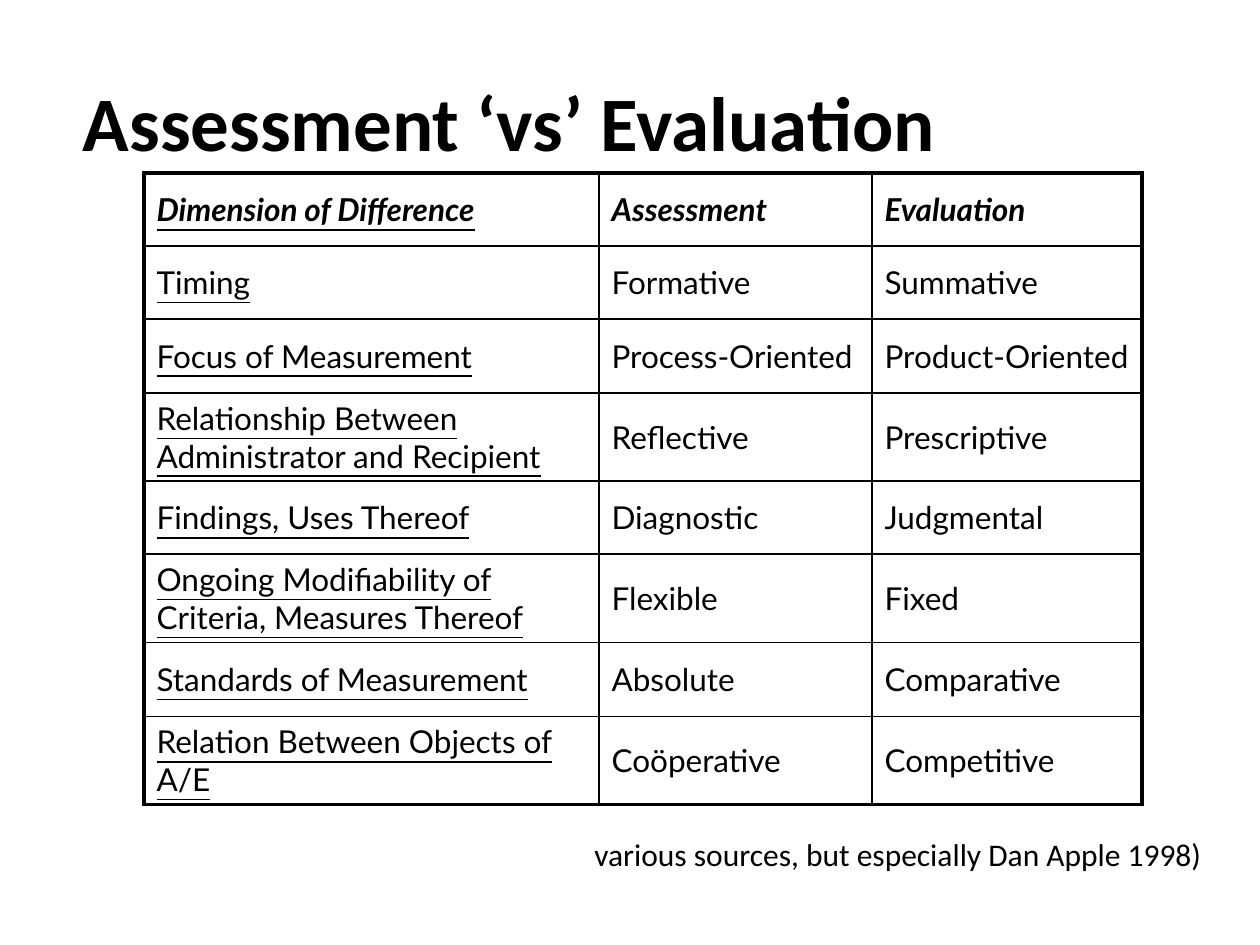
from lxml.etree import SubElement
from pptx import Presentation
from pptx.dml.color import RGBColor
from pptx.enum.text import MSO_ANCHOR, MSO_AUTO_SIZE, PP_ALIGN
from pptx.oxml.ns import qn
from pptx.util import Emu, Pt

# Content
TITLE = " Assessment ‘vs’ Evaluation"
ROWS = [
    ("Dimension of Difference", "Assessment", "Evaluation"),
    ("Timing", "Formative", "Summative"),
    ("Focus of Measurement", "Process-Oriented", "Product-Oriented"),
    ("Relationship Between Administrator and Recipient", "Reflective", "Prescriptive"),
    ("Findings, Uses Thereof", "Diagnostic", "Judgmental"),
    ("Ongoing Modifiability of Criteria, Measures Thereof", "Flexible", "Fixed"),
    ("Standards of Measurement", "Absolute", "Comparative"),
    ("Relation Between Objects of A/E", "Coöperative", "Competitive"),
]
SOURCE_NOTE = "various sources, but especially Dan Apple 1998)"

# Layout in px, 126 to the inch
SCALE = 914400 / 126
TITLE_BOX = (11, 69, 980, 103)
TABLE_ORIGIN = (144, 173)
NOTE_BOX = (582, 829, 678, 50)
COLUMN_WIDTHS = [455, 273, 270]
ROW_HEIGHTS = [73, 73, 74, 88, 73, 88, 74, 88]
TOP_ANCHORED = {(3, 0), (5, 0)}
COLORS = {"ink": "000000"}
THIN, THICK = Pt(1), Pt(2.25)


def px(value):
    return Emu(round(value * SCALE))


def write(frame, text, font="Calibri", size=18, bold=False, italic=False,
          underline=False, align=None):
    para = frame.paragraphs[0]
    para.alignment = align
    span = para.add_run()
    span.text = text
    span.font.name = font
    span.font.size = Pt(size)
    span.font.bold = bold
    span.font.italic = italic
    span.font.underline = underline
    span.font.color.rgb = RGBColor.from_string(COLORS["ink"])
    return para


def set_borders(cell, **widths):
    properties = cell._tc.get_or_add_tcPr()
    for side in "LRTB":
        line = SubElement(properties, qn(f"a:ln{side}"), w=str(widths[side]))
        fill = SubElement(line, qn("a:solidFill"))
        SubElement(fill, qn("a:srgbClr"), val=COLORS["ink"])


def add_comparison(page):
    size = (sum(COLUMN_WIDTHS), sum(ROW_HEIGHTS))
    table = page.shapes.add_table(len(ROWS), len(COLUMN_WIDTHS),
                                  *map(px, TABLE_ORIGIN + size)).table
    table.first_row = table.horz_banding = False
    for column, width in zip(table.columns, COLUMN_WIDTHS):
        column.width = px(width)
    for row, height in zip(table.rows, ROW_HEIGHTS):
        row.height = px(height)

    last_row, last_column = len(ROWS) - 1, len(COLUMN_WIDTHS) - 1
    for r, row in enumerate(ROWS):
        for c, text in enumerate(row):
            cell = table.cell(r, c)
            # The outer frame is thick, the inner grid thin
            set_borders(cell,
                        L=THICK if c == 0 else THIN,
                        R=THICK if c == last_column else THIN,
                        T=THICK if r == 0 else THIN,
                        B=THICK if r == last_row else THIN)
            cell.fill.background()
            cell.vertical_anchor = (MSO_ANCHOR.TOP if (r, c) in TOP_ANCHORED
                                    else MSO_ANCHOR.MIDDLE)
            para = write(cell.text_frame, text, font="Lato", bold=r == 0,
                         italic=r == 0, underline=c == 0)
            spacing = SubElement(para._p.get_or_add_pPr(), qn("a:spcBef"))
            SubElement(spacing, qn("a:spcPct"), val="20000")


def main():
    deck = Presentation()
    deck.slide_width, deck.slide_height = px(1260), px(945)
    page = deck.slides.add_slide(deck.slide_layouts[5])

    # Title
    title = page.shapes.title
    title.left, title.top, title.width, title.height = map(px, TITLE_BOX)
    title.text_frame.vertical_anchor = MSO_ANCHOR.MIDDLE
    write(title.text_frame, TITLE, size=44, bold=True, align=PP_ALIGN.CENTER)

    # Table
    add_comparison(page)

    # Source note
    note = page.shapes.add_textbox(*map(px, NOTE_BOX)).text_frame
    note.word_wrap = True
    note.auto_size = MSO_AUTO_SIZE.SHAPE_TO_FIT_TEXT
    write(note, SOURCE_NOTE)

    deck.save("out.pptx")


if __name__ == "__main__":
    main()
